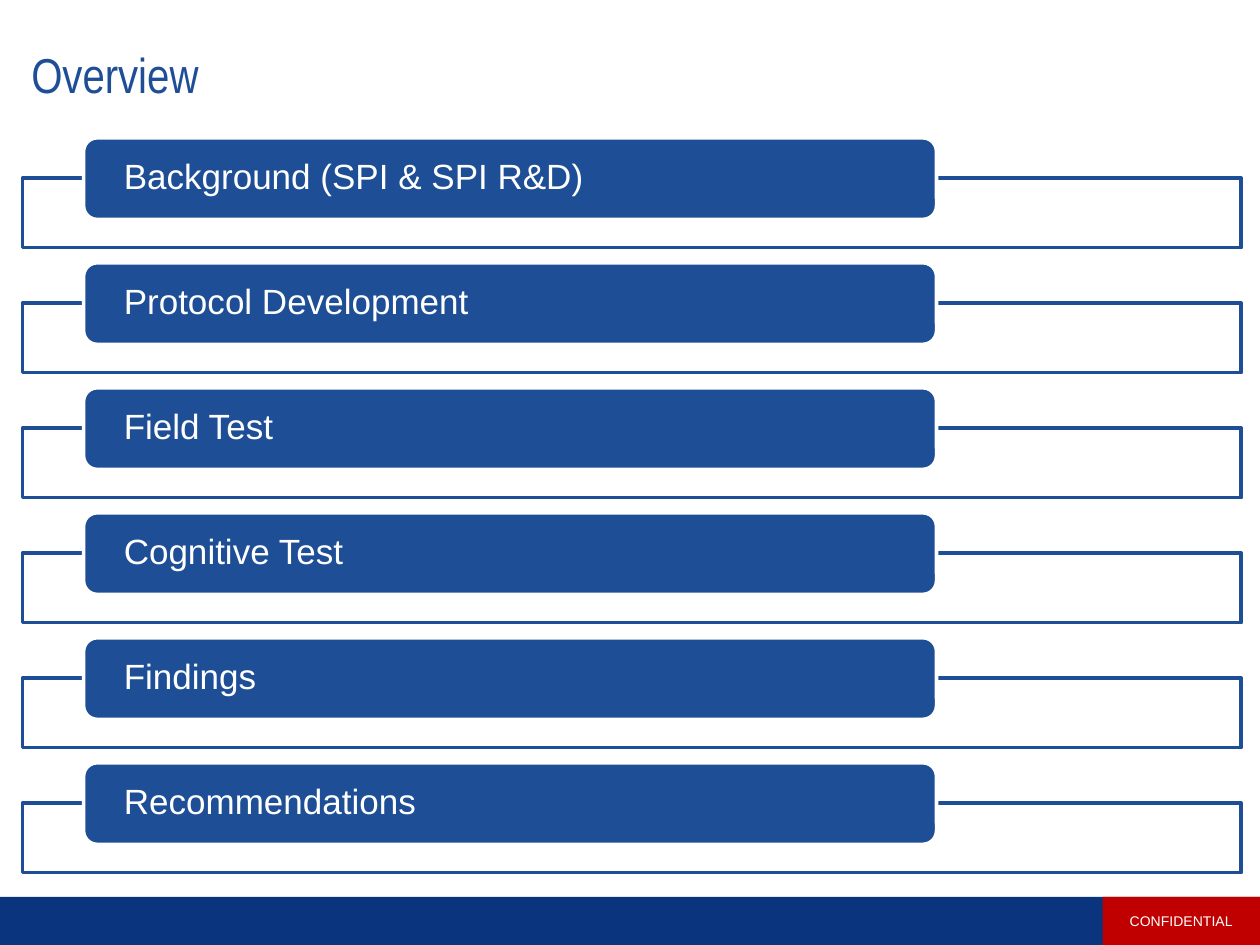
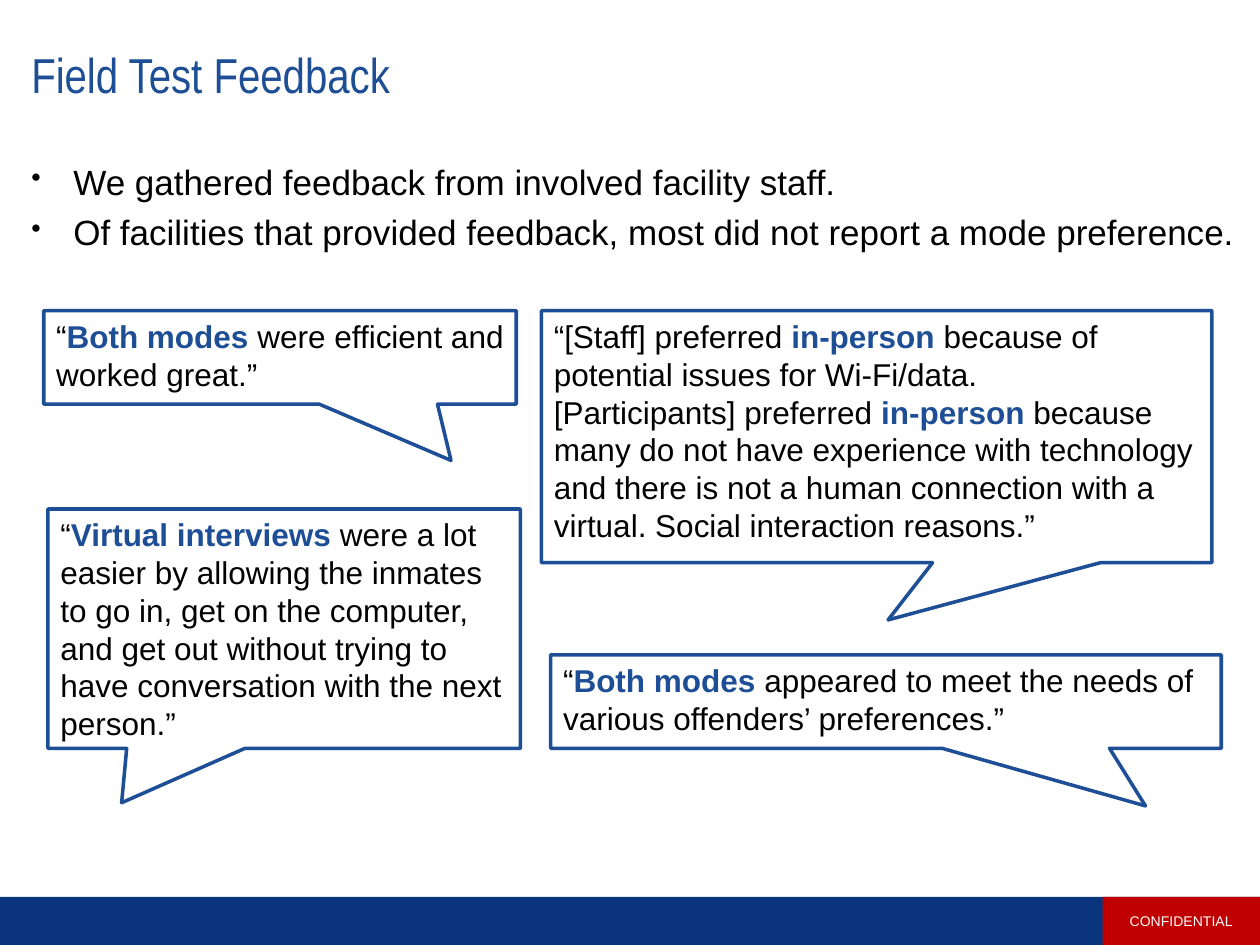
from lxml import etree
from pptx import Presentation
from pptx.dml.color import RGBColor
from pptx.enum.shapes import MSO_SHAPE
from pptx.enum.text import MSO_ANCHOR, PP_ALIGN
from pptx.oxml.ns import qn
from pptx.util import Pt

RECT = MSO_SHAPE.RECTANGLE
ROUNDED = MSO_SHAPE.ROUNDED_RECTANGLE
CALLOUT = MSO_SHAPE.RECTANGULAR_CALLOUT
TOP, MIDDLE = MSO_ANCHOR.TOP, MSO_ANCHOR.MIDDLE
LEFT, CENTER = PP_ALIGN.LEFT, PP_ALIGN.CENTER

COLORS = {
    "blue": "1E4E96",
    "navy": "0A357E",
    "red": "C00000",
    "white": "FFFFFF",
    "black": "000000",
}
TOPICS = [
    "Background (SPI & SPI R&D)",
    "Protocol Development",
    "Field Test",
    "Cognitive Test",
    "Findings",
    "Recommendations",
]
FEEDBACK = [
    "We gathered feedback from involved facility staff.",
    "Of facilities that provided feedback, most did not report a mode preference.",
]
QUOTES = [
    ((27.4, 290.9, 270, 136.8), (-0.344, 0.727),
     ["“*Virtual interviews *were a lot easier by allowing the inmates to go in, "
      "get on the computer, and get out without trying to have conversation with "
      "the next person.”"]),
    ((309.4, 177.6, 383.2, 144), (0.017, 0.727),
     ["“[Staff] preferred *in-person* because of potential issues for Wi-Fi/data.",
      "[Participants] preferred *in-person* because many do not have experience "
      "with technology and there is not a human connection with a virtual. "
      "Social interaction reasons.”"]),
    ((314.7, 374.2, 383.2, 53.4), (0.387, 1.117),
     ["“*Both modes *appeared to meet the needs of various offenders’ preferences.”"]),
    ((25, 177.6, 270, 53.4), (0.362, 1.102),
     ["“*Both modes *were efficient and worked great.”"]),
]


def rgb(name):
    """Return the palette colour with this name."""
    return RGBColor.from_string(COLORS[name])


def add_bullet(p):
    """Give a paragraph a hanging round bullet."""
    pPr = p._p.get_or_add_pPr()
    pPr.set("marL", str(Pt(24)))
    pPr.set("indent", str(-Pt(24)))
    etree.SubElement(pPr, qn("a:buSzPct")).set("val", "80000")
    etree.SubElement(pPr, qn("a:buChar")).set("char", "•")


def write(sp, paragraphs, size=20, color="black", font="Arial", align=LEFT,
          anchor=TOP, insets=(7.2, 3.6, 7.2, 3.6), spacing=None, gap=0, bullet=False):
    """Write paragraphs, with the parts between asterisks in bold blue."""
    tf = sp.text_frame
    tf.word_wrap = True
    tf.vertical_anchor = anchor
    tf.margin_left, tf.margin_top, tf.margin_right, tf.margin_bottom = map(Pt, insets)
    for i, line in enumerate(paragraphs):
        p = tf.add_paragraph() if i else tf.paragraphs[0]
        if bullet:
            add_bullet(p)
        p.alignment = align
        if spacing:
            p.line_spacing = spacing
        if i and gap:
            p.space_before = Pt(gap)
        for j, part in enumerate(line.split("*")):
            r = p.add_run()
            r.text = part
            r.font.name = font
            r.font.size = Pt(size)
            r.font.bold = j % 2 == 1
            r.font.color.rgb = rgb("blue" if j % 2 else color)


def add_box(s, kind, box, fill, line=None):
    """Add a flat preset shape with an optional outline."""
    sp = s.shapes.add_shape(kind, *map(Pt, box))
    sp.shadow.inherit = False
    sp.fill.solid()
    sp.fill.fore_color.rgb = rgb(fill)
    if line:
        sp.line.color.rgb = rgb(line)
        sp.line.width = Pt(2)
    else:
        sp.line.fill.background()
    return sp


def add_text(s, box, paragraphs, **fmt):
    """Add a text box."""
    write(s.shapes.add_textbox(*map(Pt, box)), paragraphs, **fmt)


def add_slide(prs, title):
    """Add a slide with the shared title and footer."""
    s = prs.slides.add_slide(prs.slide_layouts[6])
    add_box(s, RECT, (0, 512.5, 720, 27.5), "navy")
    label = add_box(s, RECT, (630, 512.5, 90, 27.5), "red")
    write(label, ["CONFIDENTIAL"], size=8, color="white", align=CENTER, anchor=MIDDLE)
    add_text(s, (10.8, 14.4, 696.2, 59.8), [title], size=28, color="blue",
             font="Arial Narrow", anchor=MIDDLE, insets=(7.2, 7.2, 14.4, 7.2),
             spacing=0.9)
    return s


def add_topic(s, top, topic):
    """Add a topic bar over its outlined frame."""
    add_box(s, RECT, (12.9, top + 23, 696.4, 39.8), "white", "blue")
    bar = add_box(s, ROUNDED, (47.8, top, 487.4, 46.6), "blue", "white")
    write(bar, [topic], color="white", anchor=MIDDLE, insets=(20.7, 0, 20.7, 0),
          spacing=0.9)


def add_quote(s, box, tip, paragraphs):
    """Add a speech callout whose tail ends at the tip."""
    sp = add_box(s, CALLOUT, box, "white", "blue")
    sp.adjustments[0], sp.adjustments[1] = tip
    write(sp, paragraphs, size=18)


def main():
    """Build the presentation."""
    prs = Presentation()
    prs.slide_width, prs.slide_height = Pt(720), Pt(540)

    s = add_slide(prs, "Overview")
    for i, topic in enumerate(TOPICS):
        add_topic(s, 78.8 + i * 71.42, topic)

    s = add_slide(prs, "Field Test Feedback")
    add_text(s, (10.8, 88, 709.2, 80), FEEDBACK, gap=5, bullet=True)
    for quote in QUOTES:
        add_quote(s, *quote)

    prs.save("out.pptx")


if __name__ == "__main__":
    main()
